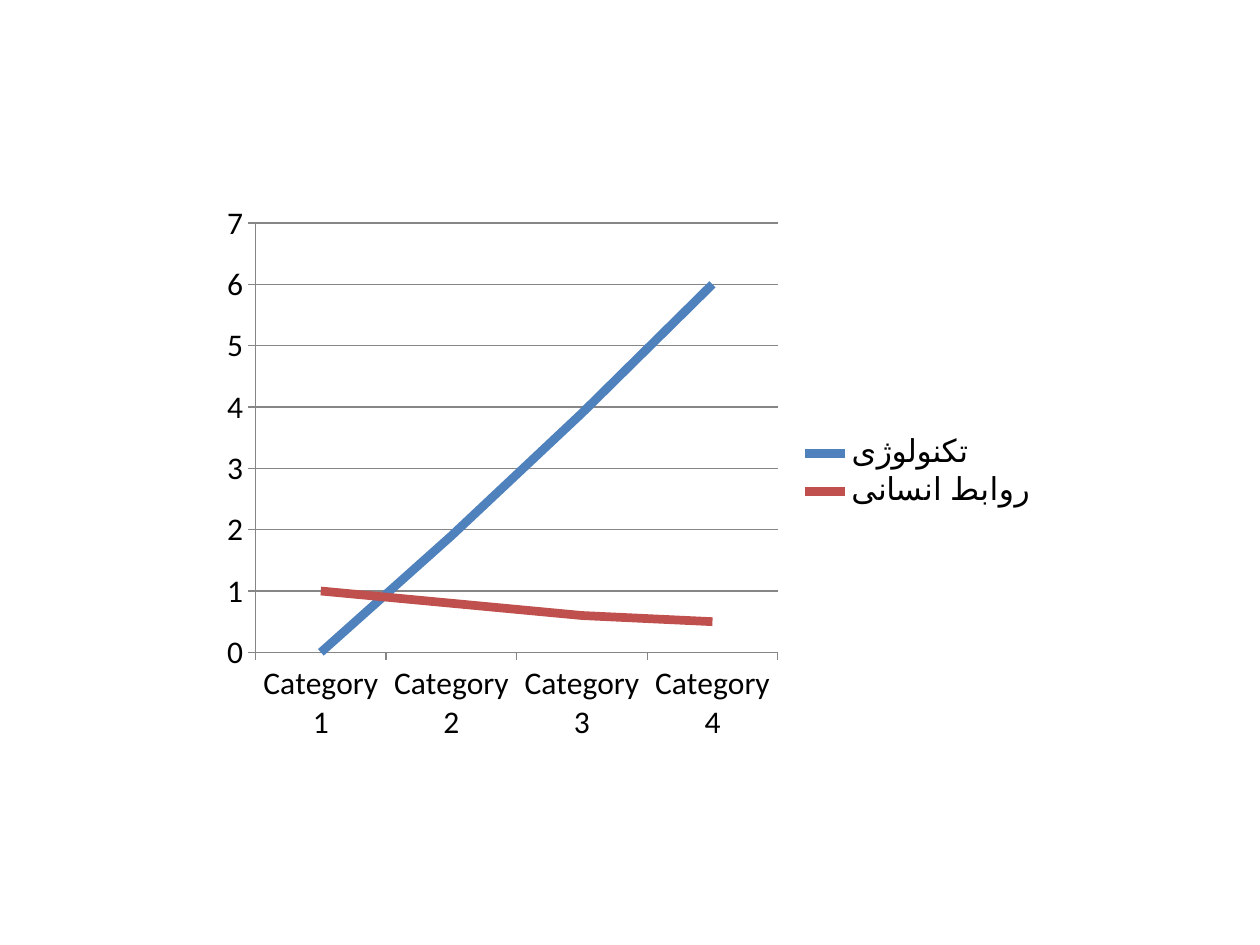
"""Build a slide with a line chart of technology against human relations."""
from dataclasses import dataclass

from pptx import Presentation
from pptx.chart.data import CategoryChartData
from pptx.dml.color import RGBColor
from pptx.enum import chart as c
from pptx.util import Inches, Pt


@dataclass(frozen=True)
class Theme:
    font: str = "Calibri"
    size: float = 18
    text: str = "000000"
    grid: str = "868686"
    technology: str = "4F81BD"
    relations: str = "C0504D"
    thin: float = 0.75
    thick: float = 5


def style_line(line, color, width):
    line.color.rgb = RGBColor.from_string(color)
    line.width = Pt(width)


theme = Theme()
series_rows = [
    ("تکنولوژی", (0, 1.9, 3.9, 6), theme.technology),
    ("روابط انسانی", (1, 0.8, 0.6, 0.5), theme.relations),
]

presentation = Presentation()
presentation.slide_width = Inches(10)
presentation.slide_height = Inches(7.5)
slide = presentation.slides.add_slide(presentation.slide_layouts[6])

chart_data = CategoryChartData()
chart_data.categories = [f"Category {number}" for number in range(1, 5)]
for name, values, color in series_rows:
    chart_data.add_series(name, values)

chart = slide.shapes.add_chart(
    c.XL_CHART_TYPE.LINE, Inches(1.67), Inches(1.53), Inches(6.67), Inches(4.44), chart_data
).chart
chart.has_title = False
chart.font.name = theme.font
chart.font.size = Pt(theme.size)
chart.font.color.rgb = RGBColor.from_string(theme.text)

chart.has_legend = True
chart.legend.position = c.XL_LEGEND_POSITION.RIGHT
chart.legend.include_in_layout = False

plot = chart.plots[0]
plot.vary_by_categories = False
for series, (name, values, color) in zip(plot.series, series_rows):
    series.smooth = False
    series.marker.style = c.XL_MARKER_STYLE.NONE
    style_line(series.format.line, color, theme.thick)

for axis in (chart.category_axis, chart.value_axis):
    axis.major_tick_mark = c.XL_TICK_MARK.OUTSIDE
    axis.minor_tick_mark = c.XL_TICK_MARK.NONE
    style_line(axis.format.line, theme.grid, theme.thin)

chart.value_axis.minimum_scale = 0
chart.value_axis.maximum_scale = 7
chart.value_axis.major_unit = 1
chart.value_axis.has_major_gridlines = True
style_line(chart.value_axis.major_gridlines.format.line, theme.grid, theme.thin)

presentation.save("out.pptx")
